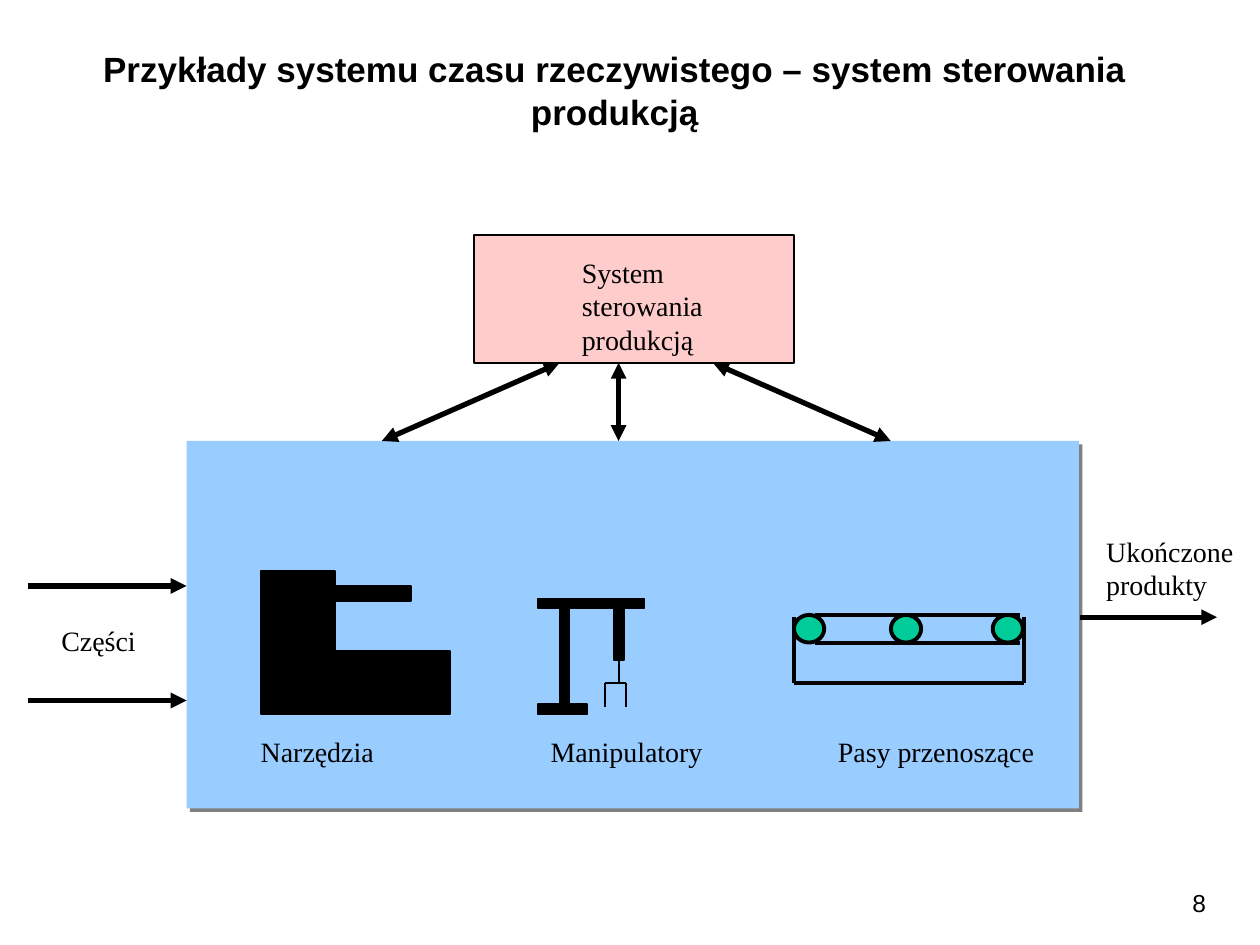
import pptx
import pptx.util
import pptx.oxml
import pptx.oxml.ns
import pptx.dml.color
import pptx.enum.shapes
import pptx.enum.text
import lxml.etree

Pt = pptx.util.Pt
Kind = pptx.enum.shapes.MSO_SHAPE
Align = pptx.enum.text.PP_ALIGN
qn = pptx.oxml.ns.qn

COLORS = {
    "ink": "000000",
    "panel": "99CCFF",
    "control": "FFCCCC",
    "roller": "00CC99",
    "shadow": "808080",
}


def color(name):
    return pptx.dml.color.RGBColor.from_string(COLORS[name])


def style(frame, size, font, bold=False, align=Align.LEFT):
    frame.vertical_anchor = pptx.enum.text.MSO_ANCHOR.TOP
    frame.auto_size = pptx.enum.text.MSO_AUTO_SIZE.NONE
    for para in frame.paragraphs:
        para.alignment = align
        for run in para.runs:
            run.font.size = Pt(size)
            run.font.name = font
            run.font.bold = bold
            run.font.color.rgb = color("ink")


def label(slide, box, text, size=16, font="Times New Roman", align=Align.LEFT, wrap=False):
    frame = slide.shapes.add_textbox(*map(Pt, box)).text_frame
    frame.text = text
    frame.word_wrap = wrap
    style(frame, size, font, align=align)


def block(slide, box, fill="ink", width=1, kind=Kind.RECTANGLE):
    shape = slide.shapes.add_shape(kind, *map(Pt, box))
    shape.shadow.inherit = False
    shape.fill.solid()
    shape.fill.fore_color.rgb = color(fill)
    if width:
        shape.line.width = Pt(width)
        shape.line.color.rgb = color("ink")
    else:
        shape.line.fill.background()
    return shape


def line(slide, ends, width, heads=()):
    link = slide.shapes.add_connector(pptx.enum.shapes.MSO_CONNECTOR.STRAIGHT, *map(Pt, ends))
    link.line.width = Pt(width)
    link.line.color.rgb = color("ink")
    for end in heads:
        lxml.etree.SubElement(link.line._get_or_add_ln(), qn("a:" + end), type="triangle")
    lxml.etree.SubElement(link._element.spPr, qn("a:effectLst"))


def heading(slide, box, text):
    title = slide.shapes.title
    title.left, title.top, title.width, title.height = map(Pt, box)
    title.text_frame.text = text
    title.text_frame.word_wrap = True
    style(title.text_frame, 20, "Arial", True, Align.CENTER)


def panel(slide, box):
    shape = block(slide, box, "panel", 0)
    effects = shape._element.spPr.find(qn("a:effectLst"))
    shade = lxml.etree.SubElement(
        effects, qn("a:outerShdw"), dist=str(Pt(2.8)), dir="2700000", algn="ctr", rotWithShape="0")
    lxml.etree.SubElement(shade, qn("a:srgbClr"), val=COLORS["shadow"])


def robot(slide, box):
    x, y, w, h = box
    bar = 5.8
    foot = h - bar
    block(slide, (x, y + foot, 28, bar))
    block(slide, (x + 12.2, y + bar, bar, foot - bar))
    block(slide, (x, y, w, bar))
    block(slide, (x + 43.2, y + bar, bar, 29.5))
    left, right, mid, grip = x + 38.2, x + 50.4, x + 46.1, y + 48.2
    for ends in (
        (left, grip, left, grip + 13.7),
        (right, grip, right, grip + 13.7),
        (left, grip, right, grip),
        (mid, y + 34.6, mid, grip),
    ):
        line(slide, ends, 1)


def tool(slide, box):
    x, y, w, h = box
    block(slide, (x, y + 46, w, h - 46))
    block(slide, (x, y, 42.5, 46))
    block(slide, (x + 42.5, y + 8.6, 43.2, 8.6))


def belt(slide, box):
    x, y, w, h = box
    wide, high = 17.3, 15.8

    def roller(left):
        block(slide, (x + left, y, wide, high), "roller", 2.25, Kind.OVAL)

    roller(0)
    roller(w - wide - 0.7)
    for level in (y, y + high):
        line(slide, (x + 12.2, level, x + w - 2.2, level), 2.25)
    for side in (x, x + w):
        line(slide, (side, y + 1.4, side, y + h), 2.25)
    line(slide, (x, y + h, x + w, y + h), 2.25)
    roller(55.4)


def plant(slide, box):
    x, y, w, h = box
    panel(slide, box)
    robot(slide, (x + 200.9, y + 90, 60.5, 66.3))
    tool(slide, (x + 42.5, y + 74.2, 108, 82))
    belt(slide, (x + 347.1, y + 99.4, 131.6, 38.9))
    for left, wide, text in (
        (35.3, 79.2, "Narzędzia"),
        (200.9, 101.5, "Manipulatory"),
        (365.1, 127.4, "Pasy przenoszące"),
    ):
        label(slide, (x + left, y + 164.2, wide, 26.6), text)


def control(slide, box):
    x, y, w, h = box
    block(slide, box, "control")
    label(slide, (x + 54.7, y + 8, 84.2, 64.8), "System\vsterowania\vprodukcją")
    base = y + h
    for start, end in ((49, -52.5), (82.8, 82.8), (136.8, 238.3)):
        line(slide, (x + start, base, x + end, base + 44.6), 3, ("headEnd", "tailEnd"))


def inputs(slide, box):
    x, y, w, h = box
    for level in (y, y + h):
        line(slide, (x, level, x + w, level), 3, ("tailEnd",))
    label(slide, (x + 12.2, y + 18, 57.6, 26.6), "Części")


def output(slide, box):
    x, y, w, h = box
    label(slide, (x + 8, y, 87.1, 46.1), "Ukończone\vprodukty")
    line(slide, (x, y + h, x + w, y + h), 3, ("tailEnd",))


def main():
    deck = pptx.Presentation()
    deck.slide_width, deck.slide_height = Pt(720), Pt(540)
    slide = deck.slides.add_slide(deck.slide_layouts[5])
    heading(slide, (12.2, 23.8, 678.2, 55.4),
            "Przykłady systemu czasu rzeczywistego – system sterowania produkcją")
    plant(slide, (106.6, 252, 510, 210))
    control(slide, (270.7, 134.4, 183, 73))
    inputs(slide, (15.8, 334.8, 90.8, 65.5))
    output(slide, (617, 301.7, 78.5, 51))
    label(slide, (630, 504, 66.2, 23.8), "8", 14, "Arial", Align.RIGHT, True)
    deck.save("out.pptx")


if __name__ == "__main__":
    main()
